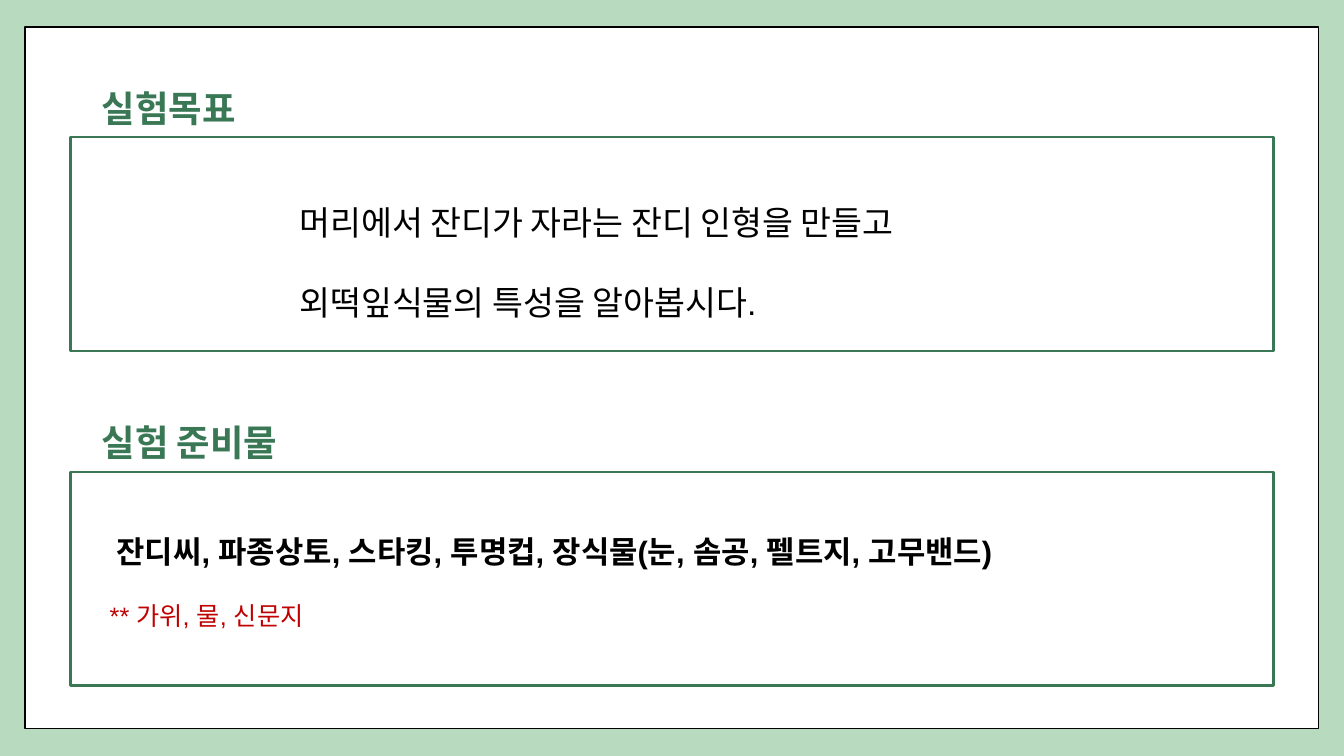
from pptx import Presentation
from pptx.dml.color import RGBColor
from pptx.enum.shapes import MSO_SHAPE
from pptx.enum.text import MSO_ANCHOR, MSO_AUTO_SIZE, PP_ALIGN
from pptx.util import Inches, Pt

RECT = MSO_SHAPE.RECTANGLE
TOP, LEFT = MSO_ANCHOR.TOP, PP_ALIGN.LEFT
FIXED, GROW = MSO_AUTO_SIZE.NONE, MSO_AUTO_SIZE.SHAPE_TO_FIT_TEXT

# Content
WIDE, HIGH = 13.33, 7.5
MINT, GREEN, WHITE, BLACK, RED = "B8DABF", "397755", "FFFFFF", "000000", "C00000"
# Each section: heading, heading width, body place in its frame, wrap, lines
PARTS = [
    ("실험목표", 1.96, (2.17, 0.19, 7.1, 1.59), False, [
        ("머리에서 잔디가 자라는 잔디 인형을 만들고", 24, BLACK, False),
        ("외떡잎식물의 특성을 알아봅시다.", 24, BLACK, False)]),
    ("실험 준비물", 2.3, (0.29, 0.19, 11.53, 1.35), True, [
        (" 잔디씨, 파종상토, 스타킹, 투명컵, 장식물(눈, 솜공, 펠트지, 고무밴드)",
         22, BLACK, True),
        ("** 가위, 물, 신문지", 18, RED, False)]),
]

# Grid
EDGE_X, EDGE_Y = 0.25, 0.27
SIDE, FIRST, STEP, TALL = 0.7, 1.36, 3.32, 2.12
HEAD_X, HEAD_UP, HEAD_H = 0.91, 0.61, 0.48


def color(code):
    return RGBColor.from_string(code)


def place(shape, *box):
    shape.left, shape.top, shape.width, shape.height = map(Inches, box)


def panel(box, line, width):
    shape = slide.shapes.add_shape(RECT, *map(Inches, box))
    shape.shadow.inherit = False
    shape.fill.solid()
    shape.fill.fore_color.rgb = color(WHITE)
    shape.line.color.rgb = color(line)
    shape.line.width = Pt(width)


def write(para, text, size, code, bold, face, space):
    para.alignment = LEFT
    para.line_spacing = space
    run = para.add_run()
    run.text = text
    font = run.font
    font.name, font.size, font.bold = face, Pt(size), bold
    font.color.rgb = color(code)


deck = Presentation()
deck.slide_width, deck.slide_height = Inches(WIDE), Inches(HIGH)
slide = deck.slides.add_slide(deck.slide_layouts[5])

# Background and sheet
slide.background.fill.solid()
slide.background.fill.fore_color.rgb = color(MINT)
panel((EDGE_X, EDGE_Y, WIDE - 2 * EDGE_X, HIGH - 2 * EDGE_Y), BLACK, 1)

for row, (name, width, spot, wrap, lines) in enumerate(PARTS):
    top = FIRST + row * STEP

    # Frame
    panel((SIDE, top, WIDE - 2 * SIDE, TALL), GREEN, 1.75)

    # Heading: the first one is the slide title
    if row == 0:
        head = slide.shapes.title
        slide.shapes._spTree.append(head._element)
    else:
        head = slide.shapes.add_textbox(0, 0, 0, 0)
    place(head, HEAD_X, top - HEAD_UP, width, HEAD_H)
    frame = head.text_frame
    frame.word_wrap, frame.auto_size = True, FIXED
    frame.vertical_anchor = TOP
    frame.margin_left = frame.margin_right = Inches(0.1)
    frame.margin_top = frame.margin_bottom = Inches(0.1)
    write(frame.paragraphs[0], name, 26, GREEN, True, "Calibri", 1.0)

    # Body
    dx, dy, wide, high = spot
    body = slide.shapes.add_textbox(0, 0, 0, 0)
    place(body, SIDE + dx, top + dy, wide, high)
    frame = body.text_frame
    frame.word_wrap, frame.auto_size = wrap, GROW
    for i, line in enumerate(lines):
        para = frame.add_paragraph() if i else frame.paragraphs[0]
        write(para, *line, "Arial", 2.0)

deck.save("out.pptx")
